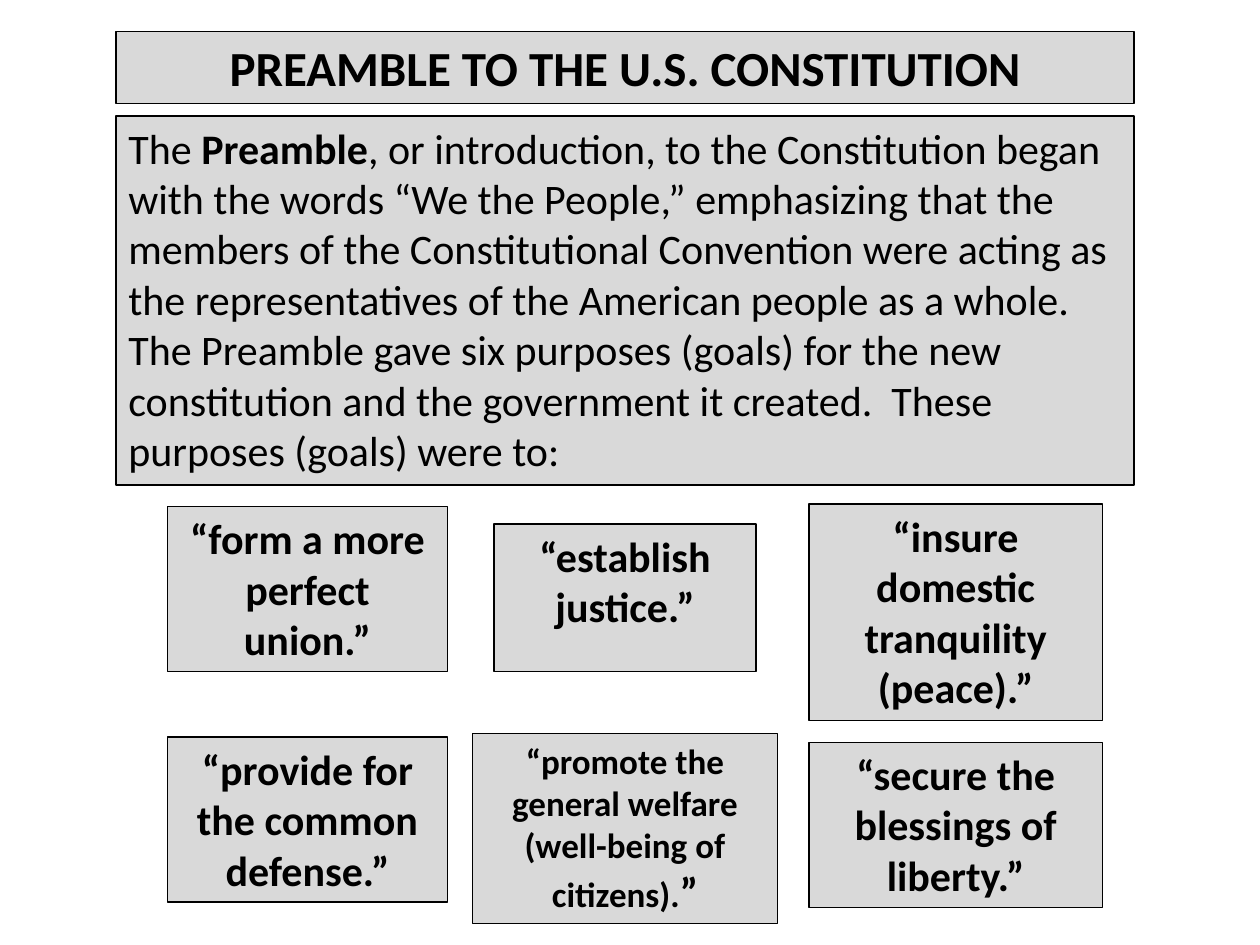
from dataclasses import dataclass

from pptx import Presentation
from pptx import util as u
from pptx.dml.color import RGBColor
from pptx.enum import shapes, text

PX = 9144


@dataclass(frozen=True)
class Theme:
    font: str = "Calibri"
    ink: RGBColor = RGBColor(0, 0, 0)
    panel: RGBColor = RGBColor(0xD9, 0xD9, 0xD9)
    border: float = 0.75
    heading: int = 28
    body: int = 24
    small: int = 20


class Page:
    def __init__(self, deck, theme):
        self.theme = theme
        self.slide = deck.slides.add_slide(deck.slide_layouts[5])

    def title(self, box, wording):
        heading = self.slide.shapes.title
        heading.left, heading.top, heading.width, heading.height = (v * PX for v in box)
        self.dress(heading, [(wording, self.theme.heading, True)])

    def panel(self, box, runs, align=text.PP_ALIGN.CENTER):
        rect = self.slide.shapes.add_shape(
            shapes.MSO_SHAPE.RECTANGLE, *(v * PX for v in box))
        rect.shadow.inherit = False
        self.dress(rect, runs, align)

    def dress(self, shape, runs, align=text.PP_ALIGN.CENTER):
        shape.fill.solid()
        shape.fill.fore_color.rgb = self.theme.panel
        shape.line.color.rgb = self.theme.ink
        shape.line.width = u.Pt(self.theme.border)
        frame = shape.text_frame
        frame.word_wrap = True
        frame.auto_size = text.MSO_AUTO_SIZE.NONE
        frame.vertical_anchor = text.MSO_ANCHOR.TOP
        paragraph = frame.paragraphs[0]
        paragraph.alignment = align
        for wording, size, bold in runs:
            run = paragraph.add_run()
            run.text = wording
            run.font.name = self.theme.font
            run.font.size = u.Pt(size)
            run.font.bold = bold
            run.font.color.rgb = self.theme.ink


def main():
    theme = Theme()
    deck = Presentation()
    deck.slide_width, deck.slide_height = 1000 * PX, 750 * PX
    page = Page(deck, theme)

    page.title((92, 25, 808, 57), "PREAMBLE TO THE U.S. CONSTITUTION")
    page.panel((92, 92, 808, 293), [
        ("The ", theme.body, False),
        ("Preamble", theme.body, True),
        (", or introduction, to the Constitution began with the words "
         "“We the People,” emphasizing that the members of the Constitutional "
         "Convention were acting as the representatives of the American people "
         "as a whole.  The Preamble gave six purposes (goals) for the new "
         "constitution and the government it created.  These purposes (goals) "
         "were to:", theme.body, False),
    ], text.PP_ALIGN.LEFT)

    goals = [
        ((133, 402, 222, 131), [("“form a more perfect union.”", theme.body)]),
        ((392, 416, 208, 117), [("“establish justice.”", theme.body)]),
        ((642, 400, 233, 172),
         [("“insure domestic tranquility (peace).”", theme.body)]),
        ((133, 585, 222, 131), [("“provide for the common defense.”", theme.body)]),
        ((375, 582, 242, 151),
         [("“promote the general welfare (well-being of citizens).", theme.small),
          ("”", theme.body)]),
        ((642, 589, 233, 131), [("“secure the blessings of liberty.”", theme.body)]),
    ]
    for box, wording in goals:
        page.panel(box, [(words, size, True) for words, size in wording])

    deck.save("out.pptx")


if __name__ == "__main__":
    main()
